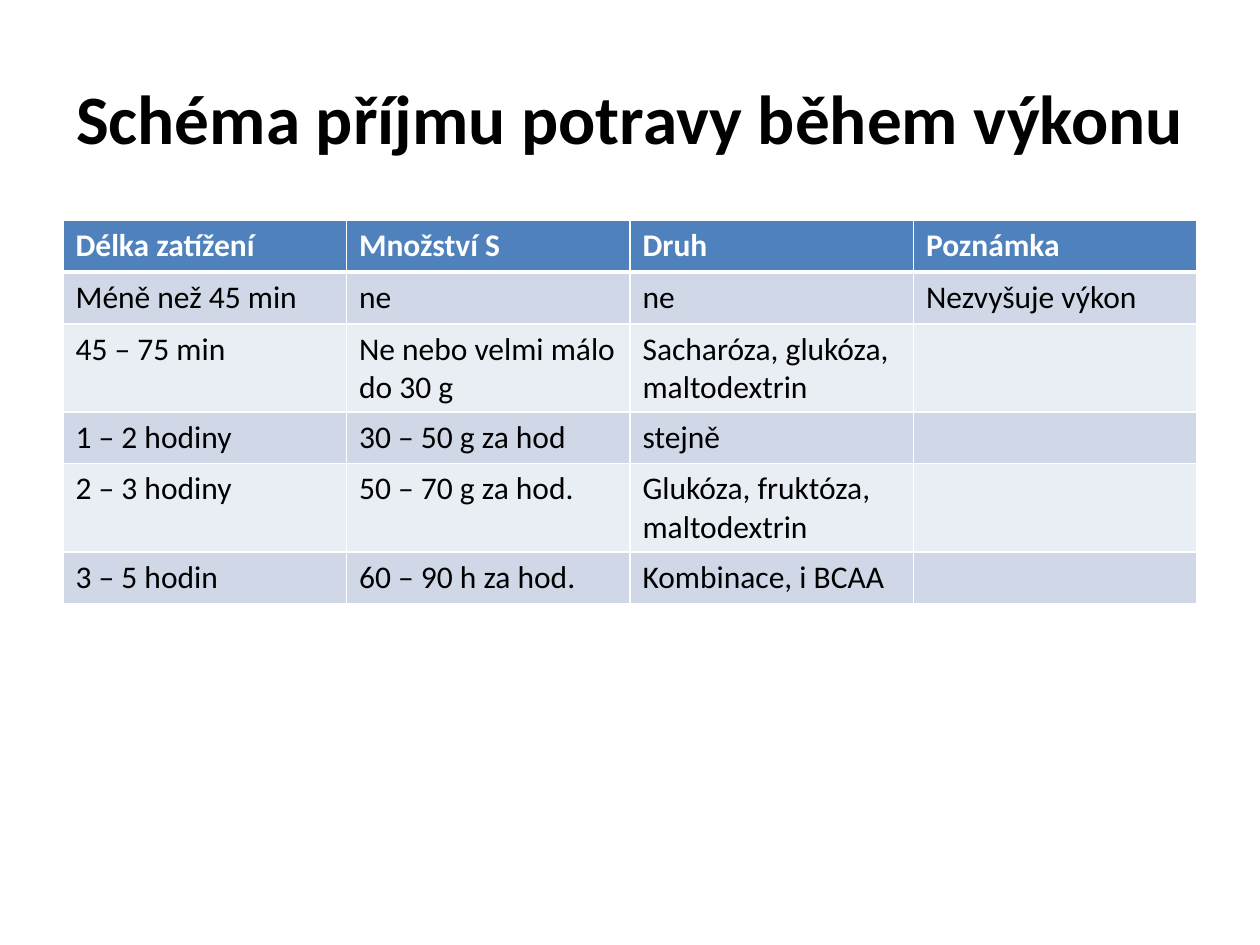
from lxml import etree
from pptx import Presentation
from pptx.dml.color import RGBColor
from pptx.enum.text import MSO_ANCHOR as Anchor, PP_ALIGN as Align
from pptx.oxml.ns import qn
from pptx.util import Inches, Pt

BLACK = RGBColor(0x00, 0x00, 0x00)
WHITE = RGBColor(0xFF, 0xFF, 0xFF)
HEADER_BLUE = RGBColor(0x4F, 0x81, 0xBD)
BAND_DARK = RGBColor(0xD0, 0xD8, 0xE8)
BAND_LIGHT = RGBColor(0xE9, 0xED, 0xF4)

ROWS = [
    ("Délka zatížení", "Množství S", "Druh", "Poznámka"),
    ("Méně než 45 min", "ne", "ne", "Nezvyšuje výkon"),
    ("45 – 75 min", "Ne nebo velmi málo do 30 g", "Sacharóza, glukóza, maltodextrin", ""),
    ("1 – 2 hodiny", "30 – 50 g za hod", "stejně", ""),
    ("2 – 3 hodiny", "50 – 70 g za hod.", "Glukóza, fruktóza, maltodextrin", ""),
    ("3 – 5 hodin", "60 – 90 h za hod.", "Kombinace, i BCAA", ""),
]


def add_span(para, text, size, color, bold):
    span = para.add_run()
    span.text = text
    span.font.name = "Calibri"
    span.font.size = Pt(size)
    span.font.bold = bold
    span.font.color.rgb = color


def add_border(cell, side, width):
    line = etree.SubElement(cell._tc.get_or_add_tcPr(), qn(f"a:ln{side}"), w=str(Pt(width)))
    fill = etree.SubElement(line, qn("a:solidFill"))
    etree.SubElement(fill, qn("a:srgbClr"), val=str(WHITE))


deck = Presentation()
deck.slide_width, deck.slide_height = Inches(10), Inches(7.5)
page = deck.slides.add_slide(deck.slide_layouts[6])

# Title
title = page.shapes.add_textbox(Inches(0.5), Inches(0.3), Inches(9), Inches(1.25))
title.text_frame.word_wrap = True
title.text_frame.vertical_anchor = Anchor.MIDDLE
para = title.text_frame.paragraphs[0]
para.alignment = Align.CENTER
add_span(para, "Schéma příjmu potravy během výkonu", 39.6, BLACK, True)

# Table: blue header, then alternating bands
table = page.shapes.add_table(
    len(ROWS), len(ROWS[0]), Inches(0.5), Inches(1.75), Inches(9), Inches(0.41 * len(ROWS))
).table
for row, texts in enumerate(ROWS):
    header = row == 0
    band = HEADER_BLUE if header else BAND_DARK if row % 2 else BAND_LIGHT
    for column, text in enumerate(texts):
        cell = table.cell(row, column)
        for side in "LRTB":
            thick = (header and side == "B") or (row == 1 and side == "T")
            add_border(cell, side, 3 if thick else 1)
        cell.fill.solid()
        cell.fill.fore_color.rgb = band
        if text:
            add_span(cell.text_frame.paragraphs[0], text, 18, WHITE if header else BLACK, header)

deck.save("out.pptx")
